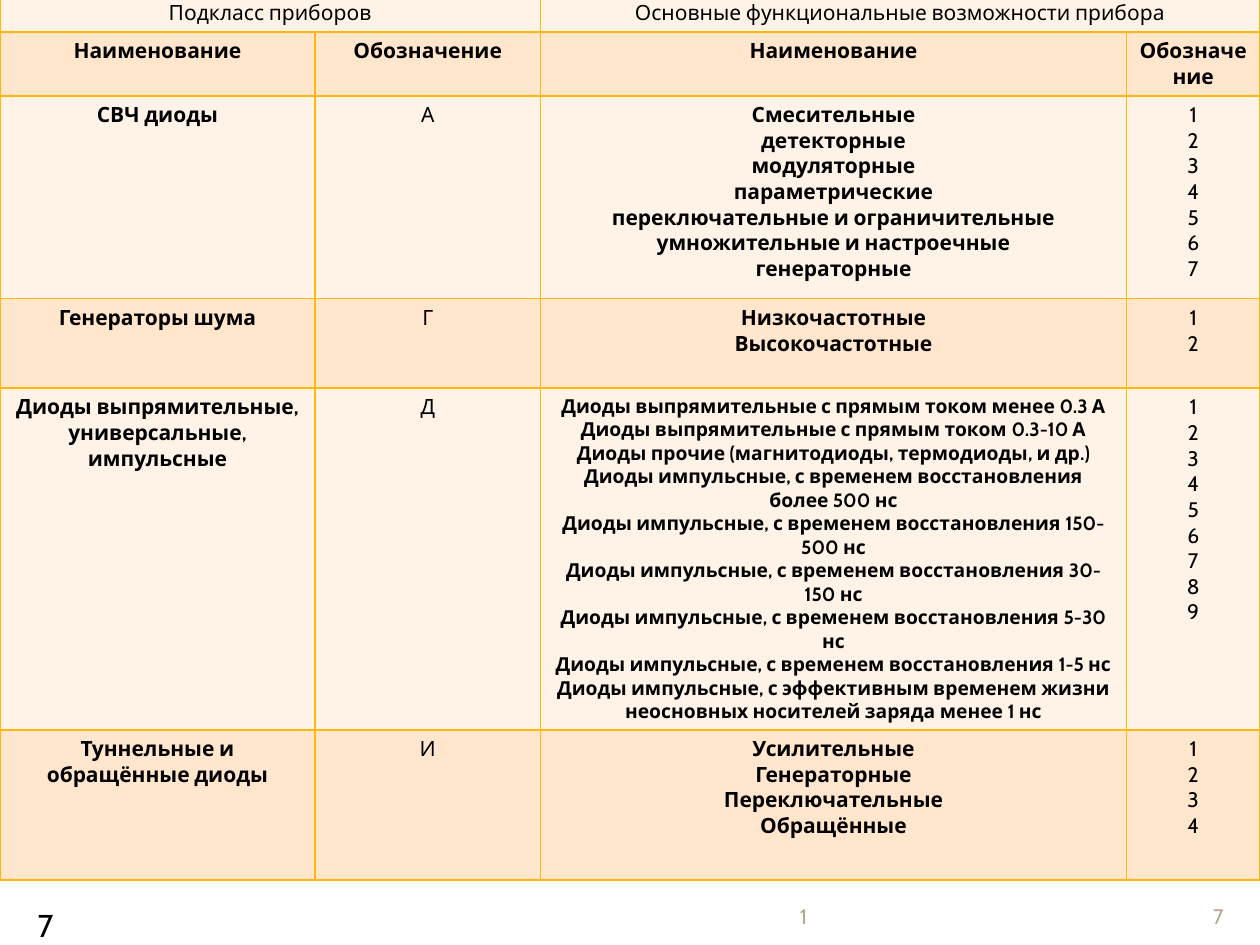
import pptx
import pptx.dml.color
import pptx.enum.text
import pptx.oxml
import pptx.oxml.ns
import pptx.util

Pt = pptx.util.Pt
RGBColor = pptx.dml.color.RGBColor
PP_ALIGN = pptx.enum.text.PP_ALIGN
MSO_ANCHOR = pptx.enum.text.MSO_ANCHOR

FONT = "Cabin"
BLACK = RGBColor(0x00, 0x00, 0x00)
TAN = RGBColor(0xB6, 0xA9, 0x8A)
GOLD = RGBColor(0xFE, 0xB8, 0x0A)
BANDS = (RGBColor(0xFF, 0xF3, 0xE7), RGBColor(0xFF, 0xE6, 0xCC))

# Content: a newline is a line break, a list holds separate paragraphs
GROUP_HEADINGS = ["Подкласс приборов", "Основные функциональные возможности прибора"]
COLUMN_HEADINGS = ["Наименование", "Обозначение"] * 2
DEVICES = [
    ("СВЧ диоды", "А",
     "Смесительные\nдетекторные\nмодуляторные\nпараметрические\n"
     "переключательные и ограничительные\nумножительные и настроечные\nгенераторные",
     "1\n2\n3\n4\n5\n6\n7"),
    ("Генераторы шума", "Г", "Низкочастотные\nВысокочастотные", "1\n2"),
    ("Диоды выпрямительные, универсальные, импульсные", "Д",
     ["Диоды выпрямительные с прямым током менее 0.3 А",
      "Диоды выпрямительные с прямым током 0.3-10 А",
      "Диоды прочие (магнитодиоды, термодиоды, и др.)",
      "Диоды импульсные, с временем восстановления более 500 нс",
      "Диоды импульсные, с временем восстановления 150-500 нс",
      "Диоды импульсные, с временем восстановления 30-150 нс",
      "Диоды импульсные, с временем восстановления 5-30 нс",
      "Диоды импульсные, с временем восстановления 1-5 нс",
      "Диоды импульсные, с эффективным временем жизни неосновных носителей заряда менее 1 нс"],
     [str(number) for number in range(1, 10)]),
    ("Туннельные и обращённые диоды", "И",
     "Усилительные\nГенераторные\nПереключательные\nОбращённые", "1\n2\n3\n4"),
]
COLUMN_WIDTHS = [180, 128.9, 334.8, 76.3]
ROW_HEIGHTS = [20.2, 26.6, 115.9, 51.1, 173.5, 85.7]
TABLE_TOP = -3.6

# Footer: text, box, size, colour, alignment, anchor, wrap
FOOTER = [
    ("1", (450, 496.8, 228.2, 37.4), 12, TAN, PP_ALIGN.LEFT, MSO_ANCHOR.BOTTOM, True),
    ("7", (678.2, 496.8, 36, 37.4), 12, TAN, PP_ALIGN.CENTER, MSO_ANCHOR.BOTTOM, True),
    ("7", (14.4, 514.1, 22.3, 28.8), 18, BLACK, PP_ALIGN.LEFT, MSO_ANCHOR.TOP, False),
]


def write_text(text_frame, content, size, color, alignment, bold=False):
    paragraphs = content if isinstance(content, list) else [content]
    for index, text in enumerate(paragraphs):
        paragraph = text_frame.paragraphs[0] if index == 0 else text_frame.add_paragraph()
        paragraph.alignment = alignment
        for line_index, line in enumerate(text.split("\n")):
            if line_index:
                paragraph.add_line_break()
            run = paragraph.add_run()
            run.text = line
            run.font.name = FONT
            run.font.size = Pt(size)
            run.font.bold = bold
            run.font.color.rgb = color


def style_cell(cell, fill):
    properties = cell._tc.get_or_add_tcPr()
    for side in ("lnL", "lnR", "lnT", "lnB"):
        properties.append(pptx.oxml.parse_xml(
            f'<a:{side} {pptx.oxml.ns.nsdecls("a")} w="{Pt(1)}"><a:solidFill>'
            f'<a:srgbClr val="{GOLD}"/></a:solidFill></a:{side}>'))
    cell.fill.solid()
    cell.fill.fore_color.rgb = fill


def add_device_table(slide):
    shape = slide.shapes.add_table(
        len(ROW_HEIGHTS), len(COLUMN_WIDTHS), Pt(0), Pt(TABLE_TOP),
        Pt(sum(COLUMN_WIDTHS)), Pt(sum(ROW_HEIGHTS)))
    table = shape.table
    for column, width in zip(table.columns, COLUMN_WIDTHS):
        column.width = Pt(width)
    for row_index, (row, height) in enumerate(zip(table.rows, ROW_HEIGHTS)):
        row.height = Pt(height)
        for cell in row.cells:
            style_cell(cell, BANDS[row_index % 2])

    # Group headings span two columns each
    for group, heading in enumerate(GROUP_HEADINGS):
        cell = table.cell(0, 2 * group)
        cell.merge(table.cell(0, 2 * group + 1))
        write_text(cell.text_frame, heading, 12, BLACK, PP_ALIGN.CENTER)

    # Names are bold, designations are regular below the headings
    for row_index, values in enumerate([COLUMN_HEADINGS] + DEVICES, start=1):
        for column_index, content in enumerate(values):
            is_name = column_index % 2 == 0
            size = 11 if is_name and isinstance(content, list) else 12
            write_text(table.cell(row_index, column_index).text_frame, content, size,
                       BLACK, PP_ALIGN.CENTER, bold=is_name or row_index == 1)


def add_footer(slide):
    for text, box, size, color, alignment, anchor, wrap in FOOTER:
        text_frame = slide.shapes.add_textbox(*map(Pt, box)).text_frame
        text_frame.word_wrap = wrap
        text_frame.vertical_anchor = anchor
        write_text(text_frame, text, size, color, alignment)


def main():
    presentation = pptx.Presentation()
    presentation.slide_width = Pt(720)
    presentation.slide_height = Pt(540)
    slide = presentation.slides.add_slide(presentation.slide_layouts[6])
    add_device_table(slide)
    add_footer(slide)
    presentation.save("out.pptx")


if __name__ == "__main__":
    main()
